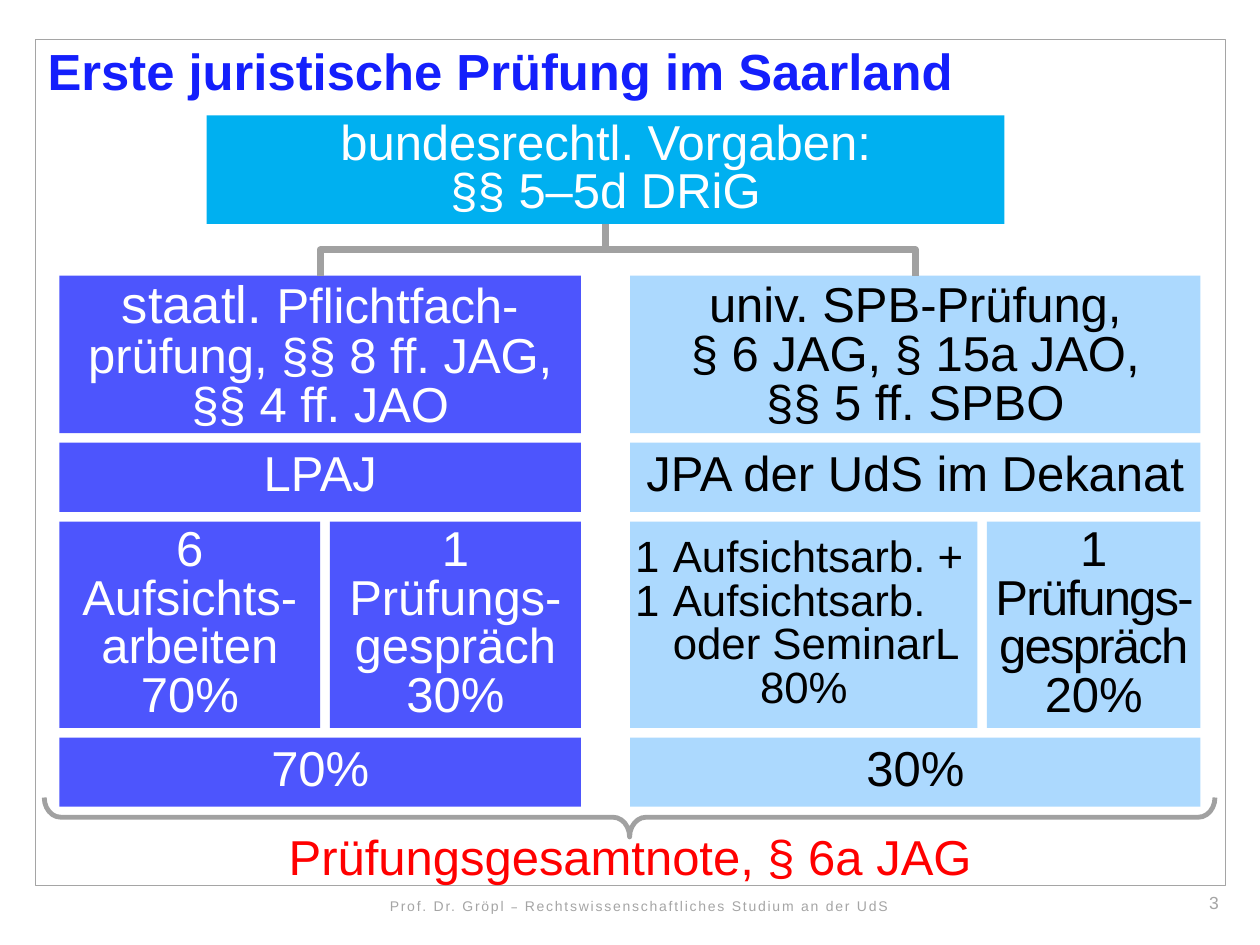
"""Build the slide on the first state law examination in Saarland."""
from pptx import Presentation
from pptx.dml.color import RGBColor
from pptx.enum.shapes import MSO_CONNECTOR, MSO_SHAPE
from pptx.enum.text import MSO_ANCHOR, MSO_AUTO_SIZE, PP_ALIGN
from pptx.oxml.ns import qn
from pptx.util import Pt
from lxml.etree import SubElement

WHITE = RGBColor(0xFF, 0xFF, 0xFF)
BLACK = RGBColor(0, 0, 0)
RED = RGBColor(0xFF, 0, 0)
TITLE_BLUE = RGBColor(0x14, 0x1F, 0xFC)
STATE_BLUE = RGBColor(0x4D, 0x55, 0xFD)
UNI_BLUE = RGBColor(0xAC, 0xD9, 0xFE)
FEDERAL_BLUE = RGBColor(0, 0xB0, 0xF0)
GREY = RGBColor(0xA1, 0xA1, 0xA1)
LIGHT_GREY = RGBColor(0xA5, 0xA5, 0xA5)


class SlideBuilder:
    def __init__(self, slide, font="Arial", size=28, spacing=0.83):
        self.s = slide
        self.font = font
        self.size = size
        self.spacing = spacing

    def frame(self, sp, insets, anchor=MSO_ANCHOR.MIDDLE):
        tf = sp.text_frame
        tf.word_wrap = True
        tf.auto_size = MSO_AUTO_SIZE.NONE
        tf.vertical_anchor = anchor
        tf.margin_left, tf.margin_top, tf.margin_right, tf.margin_bottom = map(Pt, insets)
        return tf

    def paragraph(self, tf, first, align=PP_ALIGN.CENTER, spacing=None):
        p = tf.paragraphs[0] if first else tf.add_paragraph()
        p.alignment = align
        p.line_spacing = spacing or self.spacing
        p.space_before = Pt(0)
        return p

    def run(self, p, text, color, size=None, track=0, font=None, bold=False):
        for i, line in enumerate(text.split("\n")):
            if i:
                p.add_line_break()
            if not line:
                continue
            r = p.add_run()
            r.text = line
            r.font.name = font or self.font
            r.font.size = Pt(size or self.size)
            r.font.bold = bold
            r.font.color.rgb = color
            if track:
                r.font._element.set("spc", str(track * 100))

    def title(self, text, x, y, w, h):
        sp = self.s.shapes.title
        sp.left, sp.top, sp.width, sp.height = map(Pt, (x, y, w, h))
        tf = self.frame(sp, (7.2, 5.75, 7.2, 3.6), MSO_ANCHOR.TOP)
        p = self.paragraph(tf, True, PP_ALIGN.LEFT)
        self.run(p, text, TITLE_BLUE, 29, bold=True)

    def outline(self, shape, x, y, w, h, color, weight):
        sp = self.s.shapes.add_shape(shape, Pt(x), Pt(y), Pt(w), Pt(h))
        sp.shadow.inherit = False
        sp.fill.background()
        sp.line.color.rgb = color
        sp.line.width = Pt(weight)
        return sp

    def box(self, x, y, w, h, fill, color, *paragraphs, top=2.9):
        sp = self.s.shapes.add_shape(MSO_SHAPE.RECTANGLE, Pt(x), Pt(y), Pt(w), Pt(h))
        sp.shadow.inherit = False
        sp.fill.solid()
        sp.fill.fore_color.rgb = fill
        sp.line.fill.background()
        tf = self.frame(sp, (2.9, top, 2.9, 2.9))
        for i, runs in enumerate(paragraphs):
            p = self.paragraph(tf, i == 0)
            for text, *style in runs:
                self.run(p, text, color, *style)
        return sp

    def indent(self, sp, count, hanging):
        for i, p in enumerate(sp.text_frame.paragraphs[:count]):
            p.alignment = PP_ALIGN.LEFT
            pPr = p._p.get_or_add_pPr()
            pPr.set("marL", str(Pt(21.6)))
            pPr.set("indent", str(-Pt(21.6) if i < hanging else 0))

    def label(self, x, y, w, h, runs, align=PP_ALIGN.CENTER, insets=(7.2, 3.6, 7.2, 3.6), spacing=1.0):
        sp = self.s.shapes.add_textbox(Pt(x), Pt(y), Pt(w), Pt(h))
        p = self.paragraph(self.frame(sp, insets), True, align, spacing)
        for text, *style in runs:
            self.run(p, text, *style)

    def elbow(self, parent, child):
        x1, y1 = parent.left + parent.width // 2, parent.top + parent.height
        x2, y2 = child.left + child.width // 2, child.top
        c = self.s.shapes.add_connector(MSO_CONNECTOR.ELBOW, x1, y1, x2, y2)
        c.begin_connect(parent, 2)
        c.end_connect(child, 0)
        c.width, c.height = y2 - y1, abs(x2 - x1)
        c.left = (x1 + x2 - c.width) // 2
        c.top = (y1 + y2 - c.height) // 2
        xfrm = c._element.spPr.find(qn("a:xfrm"))
        xfrm.set("rot", "16200000" if x2 > x1 else "5400000")
        xfrm.set("flipH", "1" if x2 > x1 else "0")
        c.line.color.rgb = GREY
        c.line.width = Pt(4)
        SubElement(c._element.spPr, qn("a:effectLst"))


def main():
    prs = Presentation()
    prs.slide_width, prs.slide_height = Pt(720), Pt(540)
    s = SlideBuilder(prs.slides.add_slide(prs.slide_layouts[5]))

    s.outline(MSO_SHAPE.RECTANGLE, 20, 22.5, 680.5, 483.5, LIGHT_GREY, 0.5)
    s.title("Erste juristische Prüfung im Saarland", 20, 23, 549.5, 39)

    gap = 5.5
    heights = (90, 39.5, 118, 39.5)
    rows = [157.5 + sum(heights[:i]) + i * gap for i in range(len(heights))]
    columns = (
        (34, 298, 149, STATE_BLUE, WHITE,
         [("staatl. ", 30), ("Pflichtfach-prüfung, §§ 8 ff. JAG, §§ 4 ff. JAO",)],
         "LPAJ",
         [[("6 Aufsichts-arbeiten\n70%",)]],
         [("1\nPrüfungs-gespräch\n30%",)],
         "70%"),
        (360, 326, 198.5, UNI_BLUE, BLACK,
         [("univ. SPB-Prüfung,\n§ 6 JAG, § 15a JAO,\n§§ 5 ff. SPBO",)],
         "JPA der UdS im Dekanat",
         [[(text, 25)] for text in ("1\tAufsichtsarb. +", "1\tAufsichtsarb.", "oder SeminarL", "80%")],
         [("1\n",), ("Prüfungs-gespräch\n", 28, -1), ("20%",)],
         "30%"),
    )
    federal = s.box(118, 66, 456, 62, FEDERAL_BLUE, WHITE,
                    [("bundesrechtl. Vorgaben:",)], [("§§ 5–5d DRiG",)])
    for x, w, split, fill, color, exam, office, written, oral, share in columns:
        head = s.box(x, rows[0], w, heights[0], fill, color, exam, top=5.75)
        s.elbow(federal, head)
        s.box(x, rows[1], w, heights[1], fill, color, [(office,)])
        papers = s.box(x, rows[2], split, heights[2], fill, color, *written)
        if len(written) > 1:
            s.indent(papers, 3, 2)
        s.box(x + split + gap, rows[2], w - split - gap, heights[2], fill, color, oral)
        s.box(x, rows[3], w, heights[3], fill, color, [(share,)])

    s.label(34, 472, 652, 39.5, [("Prüfungsgesamtnote, § 6a JAG", RED)],
            insets=(2.9, 2.9, 2.9, 2.9), spacing=0.83)
    brace = s.outline(MSO_SHAPE.RIGHT_BRACE, 348.5, 132.5, 22.5, 669, GREY, 2.75)
    brace.rotation = 90
    brace.adjustments[0] = 0.42

    s.label(134.5, 509, 461.5, 17.5, [
        ("Prof. Dr. Gröpl ", LIGHT_GREY, 8, 1),
        ("–", LIGHT_GREY, 8, 1, "League Spartan"),
        (" Rechtswissenschaftliches Studium an der UdS", LIGHT_GREY, 8, 1),
    ])
    s.label(634.5, 506, 62, 19.5, [("3", LIGHT_GREY, 10)], PP_ALIGN.RIGHT, (7.2, 3.6, 0, 3.6))
    prs.save("out.pptx")


if __name__ == "__main__":
    main()
